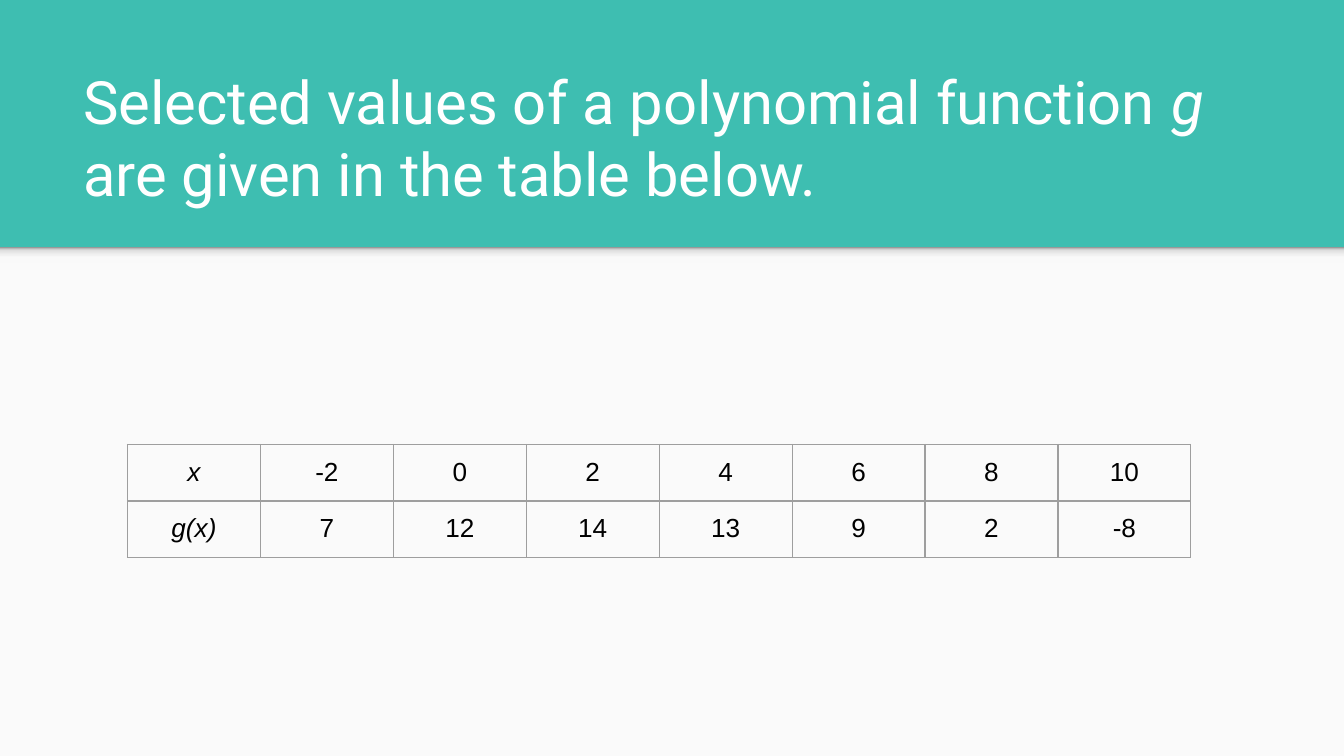
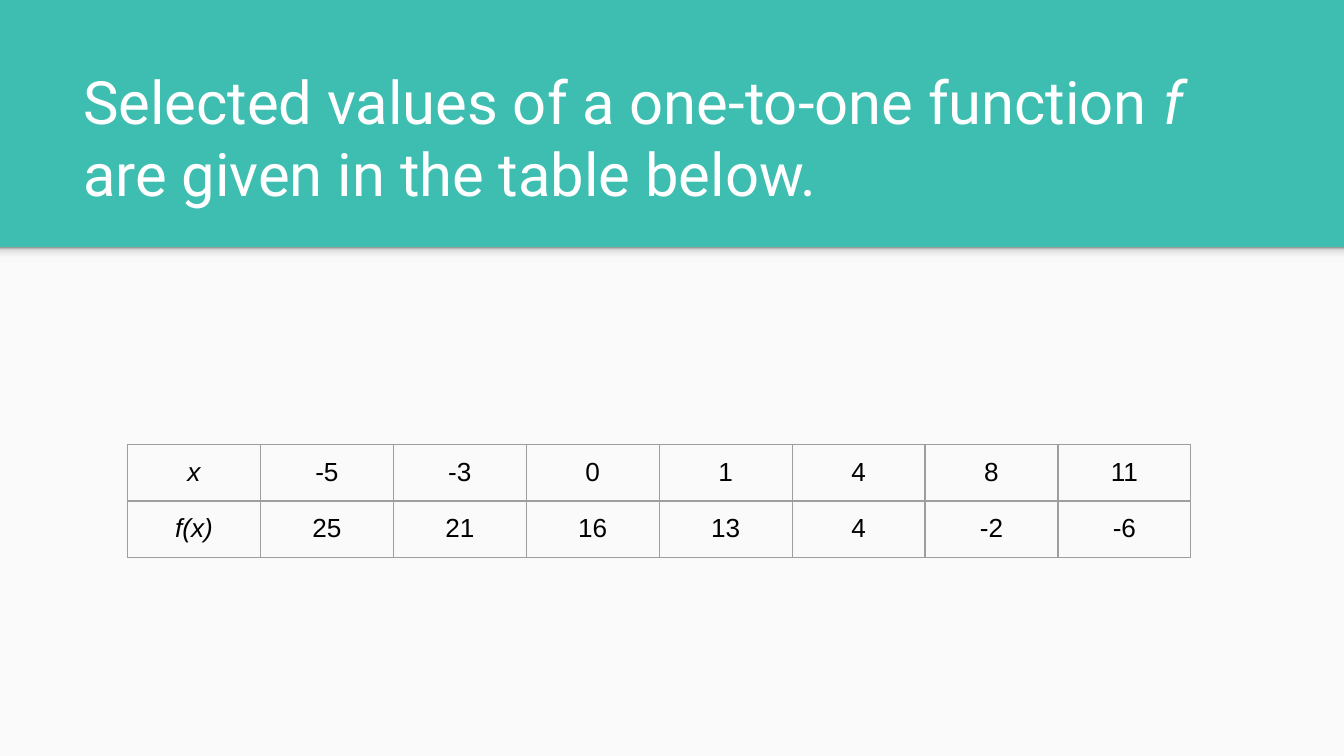
from lxml.etree import SubElement
from pptx import Presentation
from pptx.dml.color import RGBColor
from pptx.enum.shapes import MSO_SHAPE
from pptx.enum.text import MSO_ANCHOR, MSO_AUTO_SIZE, PP_ALIGN
from pptx.oxml import parse_xml
from pptx.oxml.ns import nsdecls, qn
from pptx.util import Cm, Pt

TEAL = RGBColor(0x3E, 0xBE, 0xB1)
PAPER = RGBColor(0xFA, 0xFA, 0xFA)
WHITE = RGBColor(0xFF, 0xFF, 0xFF)
BLACK = RGBColor(0x00, 0x00, 0x00)
GREY = RGBColor(0x9E, 0x9E, 0x9E)
SHADE_STOPS = [(0, "F9F9F9"), (36, "F9F9F9"), (80, "DEDEDE"), (100, "999999")]

WIDTH, HEIGHT = Cm(25.4), Cm(14.29)
BAND_BOTTOM = Cm(4.67)
INSET = Cm(0.25)
MARGINS = dict.fromkeys(["margin_left", "margin_top", "margin_right", "margin_bottom"], INSET)
TITLE_BOX = {"left": Cm(1.32), "top": Cm(2.06), "width": Cm(22.83), "height": Cm(2.13)}
TITLE_FRAME = {**MARGINS, "vertical_anchor": MSO_ANCHOR.BOTTOM,
               "auto_size": MSO_AUTO_SIZE.NONE, "word_wrap": True}
TITLE_FONT = {"name": "Roboto", "size": Pt(32)}
CELL_FONT = {"name": "Arial", "size": Pt(14)}

SLIDES = [
    ("polynomial", "g", [-2, 0, 2, 4, 6, 8, 10], [7, 12, 14, 13, 9, 2, -8]),
    ("one-to-one", "f", [-5, -3, 0, 1, 4, 8, 11], [25, 21, 16, 13, 4, -2, -6]),
]


def apply(target, values):
    """Set each attribute named in values on target."""
    for name, value in values.items():
        setattr(target, name, value)


def add_run(paragraph, text, font, color, italic):
    run = paragraph.add_run()
    run.text = text
    apply(run.font, {**font, "italic": italic})
    run.font.color.rgb = color


presentation = Presentation()
presentation.slide_width, presentation.slide_height = WIDTH, HEIGHT
background = presentation.slide_master.background.fill
background.solid()
background.fore_color.rgb = TEAL

# The layout keeps only its title
layout = presentation.slide_layouts.get_by_name("Title Only")
for placeholder in list(layout.placeholders):
    if placeholder.placeholder_format.idx != 0:
        placeholder.element.getparent().remove(placeholder.element)
    else:
        apply(placeholder, TITLE_BOX)

slides = [presentation.slides.add_slide(layout) for _ in SLIDES]

# Paper and its top shade are made on a slide, then moved to the shared layout
shapes = slides[0].shapes
paper = shapes.add_shape(MSO_SHAPE.RECTANGLE, 0, BAND_BOTTOM, WIDTH, HEIGHT - BAND_BOTTOM)
paper.fill.solid()
paper.fill.fore_color.rgb = PAPER
shade = shapes.add_shape(MSO_SHAPE.RECTANGLE, 0, BAND_BOTTOM, WIDTH, Cm(0.3))
stops = "".join(f'<a:gs pos="{position * 1000}"><a:srgbClr val="{color}"/></a:gs>'
                for position, color in SHADE_STOPS)
shade.element.spPr.find(qn("a:prstGeom")).addnext(parse_xml(
    f'<a:gradFill {nsdecls("a")} rotWithShape="1"><a:gsLst>{stops}</a:gsLst>'
    '<a:lin ang="16200000" scaled="0"/></a:gradFill>'))
for position, shape in enumerate([paper, shade], start=2):
    shape.line.fill.background()
    shape.shadow.inherit = False
    layout.shapes.element.insert(position, shape.element)

for slide, (kind, function, inputs, outputs) in zip(slides, SLIDES):
    title = slide.shapes.title
    apply(title, TITLE_BOX)
    apply(title.text_frame, TITLE_FRAME)
    paragraph = title.text_frame.paragraphs[0]
    paragraph.alignment = PP_ALIGN.LEFT
    for text, italic in [(f"Selected values of a {kind} function ", False),
                         (function, True),
                         (" are given in the table below.", False)]:
        add_run(paragraph, text, TITLE_FONT, WHITE, italic)

    rows = [["x", *inputs], [f"{function}(x)", *outputs]]
    table = slide.shapes.add_table(len(rows), len(rows[0]), Cm(2.41), Cm(8.4),
                                   Cm(20.1), Cm(2.14)).table
    apply(table, {"first_row": False, "horz_banding": False})
    for row_index, row in enumerate(rows):
        for column_index, value in enumerate(row):
            cell = table.cell(row_index, column_index)
            apply(cell, MARGINS)
            properties = cell._tc.get_or_add_tcPr()
            for side in ("lnL", "lnR", "lnT", "lnB"):
                border = SubElement(properties, qn(f"a:{side}"), w=str(Pt(0.75)))
                border_fill = SubElement(border, qn("a:solidFill"))
                SubElement(border_fill, qn("a:srgbClr"), val=str(GREY))
            cell.fill.background()
            paragraph = cell.text_frame.paragraphs[0]
            paragraph.alignment = PP_ALIGN.CENTER
            add_run(paragraph, str(value), CELL_FONT, BLACK, column_index == 0)

presentation.save("out.pptx")
